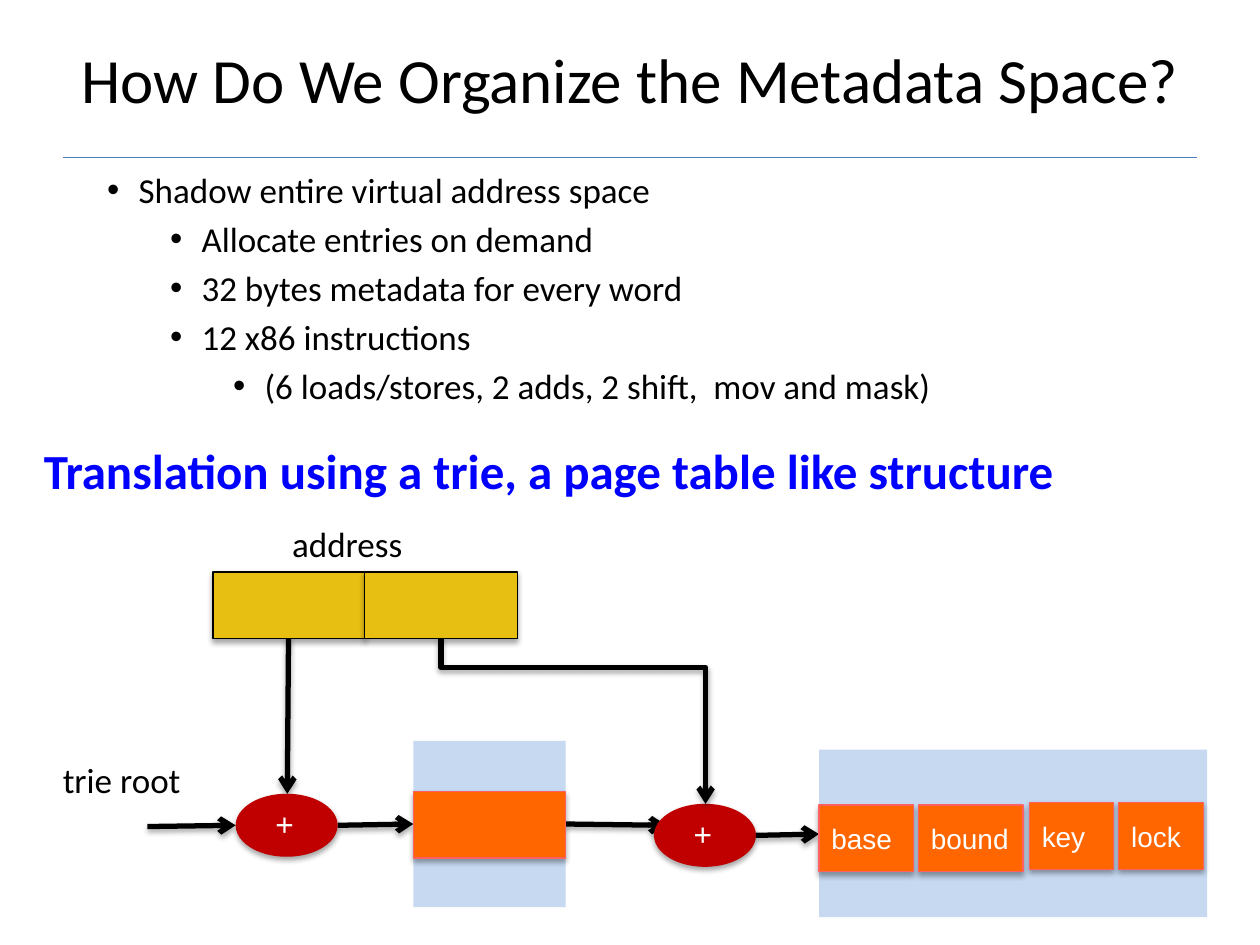
import pptx
import pptx.dml.color
import pptx.enum.shapes
import pptx.enum.text
import pptx.oxml.ns
import pptx.util
from lxml import etree
from pptx.util import Inches

qn = pptx.oxml.ns.qn
SHAPE = pptx.enum.shapes.MSO_SHAPE
CONNECTOR = pptx.enum.shapes.MSO_CONNECTOR
ANCHOR = pptx.enum.text.MSO_ANCHOR
ALIGN = pptx.enum.text.PP_ALIGN
AUTO = pptx.enum.text.MSO_AUTO_SIZE

BLACK, WHITE, BLUE, RULE = "000000", "FFFFFF", "0000FF", "4F81BD"
GOLD, RED, PALE, ORANGE, ORANGE_EDGE = "E7BF13", "C00000", "C6D9F1", "FF6600", "FF6161"
BOX_H = 0.53


def rgb(value):
    """Turn a hex string into a colour."""
    return pptx.dml.color.RGBColor.from_string(value)


def child(parent, tag, **attrs):
    """Append an XML child with the given attributes."""
    e = etree.SubElement(parent, qn(tag))
    for name, value in attrs.items():
        e.set(name, str(value))
    return e


def write(p, text, size=20, font="Calibri", color=BLACK, bold=False, align=None):
    """Write formatted text into a paragraph."""
    p.alignment = align
    r = p.add_run()
    r.text = text
    r.font.size = pptx.util.Pt(size)
    r.font.name = font
    r.font.bold = bold
    r.font.color.rgb = rgb(color)


def set_effects(sp, shadow):
    """Give a shape a soft drop shadow, or none at all."""
    effects = child(sp._element.spPr, "a:effectLst")
    if shadow:
        outer = child(effects, "a:outerShdw", blurRad=40000, dist=23000,
                      dir=5400000, rotWithShape=0)
        child(child(outer, "a:srgbClr", val=BLACK), "a:alpha", val=35000)


def place(sp, left, top, width, height):
    """Move and size a shape in inches."""
    sp.left, sp.top = Inches(left), Inches(top)
    sp.width, sp.height = Inches(width), Inches(height)


def add_title(s, text):
    """Fill the title placeholder."""
    sp = s.shapes.title
    place(sp, 0.5, 0.33, 9, 0.58)
    tf = sp.text_frame
    tf.auto_size = AUTO.NONE
    tf.vertical_anchor = ANCHOR.MIDDLE
    write(tf.paragraphs[0], text, size=36, align=ALIGN.CENTER)


def add_bullets(s, items):
    """Fill the body placeholder with levelled bullets."""
    sp = s.placeholders[1]
    place(sp, 0.75, 1.29, 8.17, 2.58)
    tf = sp.text_frame
    tf.auto_size = AUTO.NONE
    for i, (level, text) in enumerate(items):
        p = tf.add_paragraph() if i else tf.paragraphs[0]
        p.level = level
        pPr = p._p.get_or_add_pPr()
        pPr.set("marL", str(Inches(0.25 + 0.5 * level)))
        pPr.set("indent", str(Inches(-0.25)))
        child(child(pPr, "a:spcBef"), "a:spcPct", val=20000)
        child(pPr, "a:buFont", typeface="Arial")
        child(pPr, "a:buChar", char="•")
        write(p, text)


def add_label(s, text, left, top, width, height, **fmt):
    """Add a text box."""
    sp = s.shapes.add_textbox(*map(Inches, (left, top, width, height)))
    tf = sp.text_frame
    tf.word_wrap = True
    tf.auto_size = AUTO.SHAPE_TO_FIT_TEXT
    write(tf.paragraphs[0], text, **fmt)


def add_box(s, left, top, width, height, fill, line=None, text=None,
            kind=SHAPE.RECTANGLE, shadow=True, **fmt):
    """Add a filled shape, with text if given."""
    sp = s.shapes.add_shape(kind, *map(Inches, (left, top, width, height)))
    sp.fill.solid()
    sp.fill.fore_color.rgb = rgb(fill)
    if line:
        sp.line.color.rgb = rgb(line)
        sp.line.width = pptx.util.Pt(0.75)
    else:
        sp.line.fill.background()
    set_effects(sp, shadow)
    if text:
        tf = sp.text_frame
        tf.vertical_anchor = ANCHOR.MIDDLE
        write(tf.paragraphs[0], text, font="Arial", color=WHITE, **fmt)
    return sp


def add_adder(s, left, top):
    """Add a red plus node."""
    sp = add_box(s, left, top, 0.81, 0.5, RED, text="+", kind=SHAPE.OVAL,
                 size=18, align=ALIGN.CENTER)
    sp.text_frame._txBody.bodyPr.set("vert", "vert")


def add_line(s, x1, y1, x2, y2, color=BLACK, width=3, arrow=True,
             kind=CONNECTOR.STRAIGHT):
    """Add a line, by default a shadowed arrow."""
    c = s.shapes.add_connector(kind, *map(Inches, (x1, y1, x2, y2)))
    c.line.color.rgb = rgb(color)
    c.line.width = pptx.util.Pt(width)
    if arrow:
        child(c.line._get_or_add_ln(), "a:tailEnd", type="arrow")
    set_effects(c, arrow)
    return c


def add_elbow(s, x1, y1, x2, y2, bend):
    """Add an arrow that goes down, across and down again."""
    cx, cy = (x1 + x2) / 2, (y1 + y2) / 2
    half_w, half_h = (y2 - y1) / 2, (x2 - x1) / 2
    c = add_line(s, cx - half_w, cy - half_h, cx + half_w, cy + half_h,
                 kind=CONNECTOR.ELBOW)
    spPr = c._element.spPr
    xfrm = spPr.find(qn("a:xfrm"))
    xfrm.set("rot", "16200000")
    xfrm.set("flipH", "1")
    guides = spPr.find(qn("a:prstGeom")).find(qn("a:avLst"))
    child(guides, "a:gd", name="adj1", fmla=f"val {round(bend * 100000)}")


def add_diagram(s):
    """Draw the two-level trie lookup."""
    add_line(s, 2.29, 5.06, 2.28, 6.3)
    add_line(s, 2.68, 6.55, 3.28, 6.54)
    add_line(s, 4.49, 6.54, 5.29, 6.55)
    for i in range(2):
        add_box(s, 1.69 + 1.205 * i, 4.54, 1.21, BOX_H, GOLD, BLACK)
    add_adder(s, 5.19, 6.38)
    add_elbow(s, 3.5, 5.06, 5.6, 6.38, 0.18)
    add_box(s, 6.5, 5.95, 3.08, 1.33, PALE, shadow=False)
    add_box(s, 3.28, 5.88, 1.21, 1.32, PALE, shadow=False)
    add_box(s, 3.28, 6.28, 1.21, BOX_H, ORANGE, ORANGE_EDGE)
    add_line(s, 6, 6.63, 6.5, 6.62)
    add_adder(s, 1.87, 6.3)
    add_line(s, 1.17, 6.56, 1.87, 6.55)
    for text, left, top, width in (("base", 6.5, 6.39, 0.75), ("bound", 7.29, 6.39, 0.83),
                                   ("key", 8.17, 6.37, 0.67), ("lock", 8.88, 6.37, 0.67)):
        add_box(s, left, top, width, BOX_H, ORANGE, ORANGE_EDGE, text, size=16,
                align=ALIGN.LEFT)
    add_label(s, "trie root", 0.4, 5.97, 1.39, 0.44)
    add_label(s, "address", 2.22, 4.1, 1.45, 0.44)


def main():
    """Build the slide and save it."""
    prs = pptx.Presentation()
    prs.slide_width, prs.slide_height = Inches(10), Inches(7.5)
    s = prs.slides.add_slide(prs.slide_layouts[1])
    add_title(s, "How Do We Organize the Metadata Space?")
    add_bullets(s, [
        (0, "Shadow entire virtual address space"),
        (1, "Allocate entries on demand"),
        (1, "32 bytes metadata for every word"),
        (1, "12 x86 instructions"),
        (2, "(6 loads/stores, 2 adds, 2 shift,  mov and mask)"),
    ])
    add_line(s, 0.5, 1.25, 9.5, 1.25, color=RULE, width=1, arrow=False)
    add_diagram(s)
    add_label(s, "Translation using a trie, a page table like structure",
              0.25, 3.45, 9.67, 0.57, size=28, color=BLUE, bold=True)
    prs.save("out.pptx")


if __name__ == "__main__":
    main()
